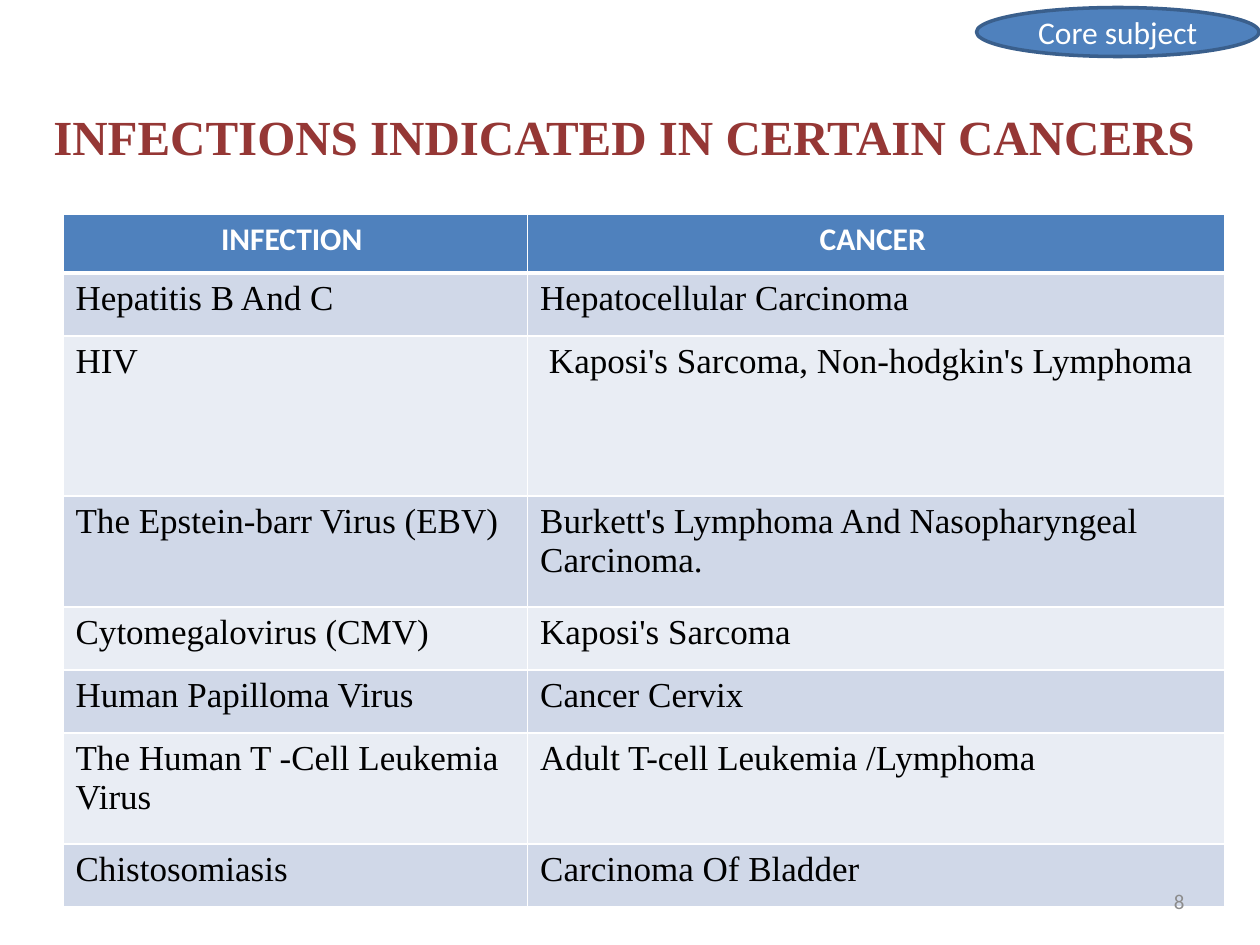
from pptx import Presentation
from pptx.dml.color import RGBColor
from pptx.enum.shapes import MSO_SHAPE as SHAPE
from pptx.enum.text import MSO_ANCHOR as ANCHOR, PP_ALIGN as ALIGN
from pptx.oxml.ns import qn
from pptx.util import Pt
from lxml.etree import SubElement

SERIF, SANS = "Times New Roman", "Calibri"
BLUE, WHITE, BLACK = "4F81BD", "FFFFFF", "000000"
BANDS = ("D0D8E8", "E9EDF4")

HEADER = ("INFECTION ", "CANCER ")
ROWS = [
    ("Hepatitis B And C", "Hepatocellular Carcinoma"),
    ("HIV", " Kaposi's Sarcoma, Non-hodgkin's Lymphoma"),
    ("The Epstein-barr Virus (EBV)",
     "Burkett's Lymphoma And Nasopharyngeal Carcinoma."),
    ("Cytomegalovirus (CMV)", "Kaposi's Sarcoma"),
    ("Human Papilloma Virus", "Cancer Cervix"),
    ("The Human T -Cell Leukemia Virus", "Adult T-cell Leukemia /Lymphoma"),
    ("Chistosomiasis", "Carcinoma Of Bladder"),
]
COL_WIDTHS = (265.5, 398.5)
ROW_HEIGHTS = (33.6, 36, 91.4, 63.5, 36, 36, 63.5, 36)


def rgb(value):
    return RGBColor.from_string(value)


class SlideBuilder:
    """Holds the current slide and draws each kind of element on it."""

    def __init__(self, slide):
        self.s = slide

    def add_text(self, tf, text, size, font, color, bold=False, align=ALIGN.LEFT):
        p = tf.paragraphs[0]
        p.alignment = align
        r = p.add_run()
        r.text = text
        r.font.size, r.font.name, r.font.bold = Pt(size), font, bold
        r.font.color.rgb = rgb(color)

    def title(self, text, x, y, w, h):
        sp = self.s.shapes.title
        sp.left, sp.top, sp.width, sp.height = Pt(x), Pt(y), Pt(w), Pt(h)
        sp.text_frame.vertical_anchor = ANCHOR.MIDDLE
        self.add_text(sp.text_frame, text, 28, SERIF, "953735", True, ALIGN.CENTER)

    def border(self, cell, side, width):
        """Draw a white line on one side: L, R, T or B."""
        props = cell._tc.get_or_add_tcPr()
        line = SubElement(props, qn(f"a:ln{side}"), w=str(Pt(width)))
        fill = SubElement(line, qn("a:solidFill"))
        SubElement(fill, qn("a:srgbClr"), val=WHITE)

    def cell(self, cell, text, row):
        is_header = row == 0
        for side in "LRTB":
            heavy = (row, side) in ((0, "B"), (1, "T"))
            self.border(cell, side, 3 if heavy else 1)
        cell.fill.solid()
        cell.fill.fore_color.rgb = rgb(BLUE if is_header else BANDS[(row - 1) % 2])
        if is_header:
            self.add_text(cell.text_frame, text, 18, SANS, WHITE, True, ALIGN.CENTER)
        else:
            self.add_text(cell.text_frame, text, 20, SERIF, BLACK)

    def table(self, rows, x, y, widths, heights):
        table = self.s.shapes.add_table(
            len(rows), len(widths), Pt(x), Pt(y),
            Pt(sum(widths)), Pt(sum(heights))).table
        for col, width in zip(table.columns, widths):
            col.width = Pt(width)
        for i, (texts, height) in enumerate(zip(rows, heights)):
            table.rows[i].height = Pt(height)
            for j, text in enumerate(texts):
                self.cell(table.cell(i, j), text, i)

    def badge(self, text, x, y, w, h):
        sp = self.s.shapes.add_shape(SHAPE.OVAL, Pt(x), Pt(y), Pt(w), Pt(h))
        sp.shadow.inherit = False
        sp.fill.solid()
        sp.fill.fore_color.rgb = rgb(BLUE)
        sp.line.color.rgb = rgb("3A5F8C")
        sp.line.width = Pt(2)
        sp.text_frame.vertical_anchor = ANCHOR.MIDDLE
        self.add_text(sp.text_frame, text, 18, SANS, WHITE, align=ALIGN.CENTER)

    def page_number(self, text, x, y, w, h):
        tf = self.s.shapes.add_textbox(Pt(x), Pt(y), Pt(w), Pt(h)).text_frame
        tf.word_wrap = True
        tf.vertical_anchor = ANCHOR.MIDDLE
        self.add_text(tf, text, 12, SANS, "8C8C8C", align=ALIGN.RIGHT)


def main():
    prs = Presentation()
    prs.slide_width, prs.slide_height = Pt(720), Pt(540)
    title_only = prs.slide_layouts[5]
    builder = SlideBuilder(prs.slides.add_slide(title_only))
    builder.title("INFECTIONS INDICATED IN CERTAIN CANCERS ", 0, 32.4, 720, 90)
    builder.table([HEADER, *ROWS], 36, 122.4, COL_WIDTHS, ROW_HEIGHTS)
    builder.badge("Core subject", 558, 4.3, 161.5, 28)
    builder.page_number("8", 516, 500.5, 168, 28.8)
    prs.save("out.pptx")


if __name__ == "__main__":
    main()
